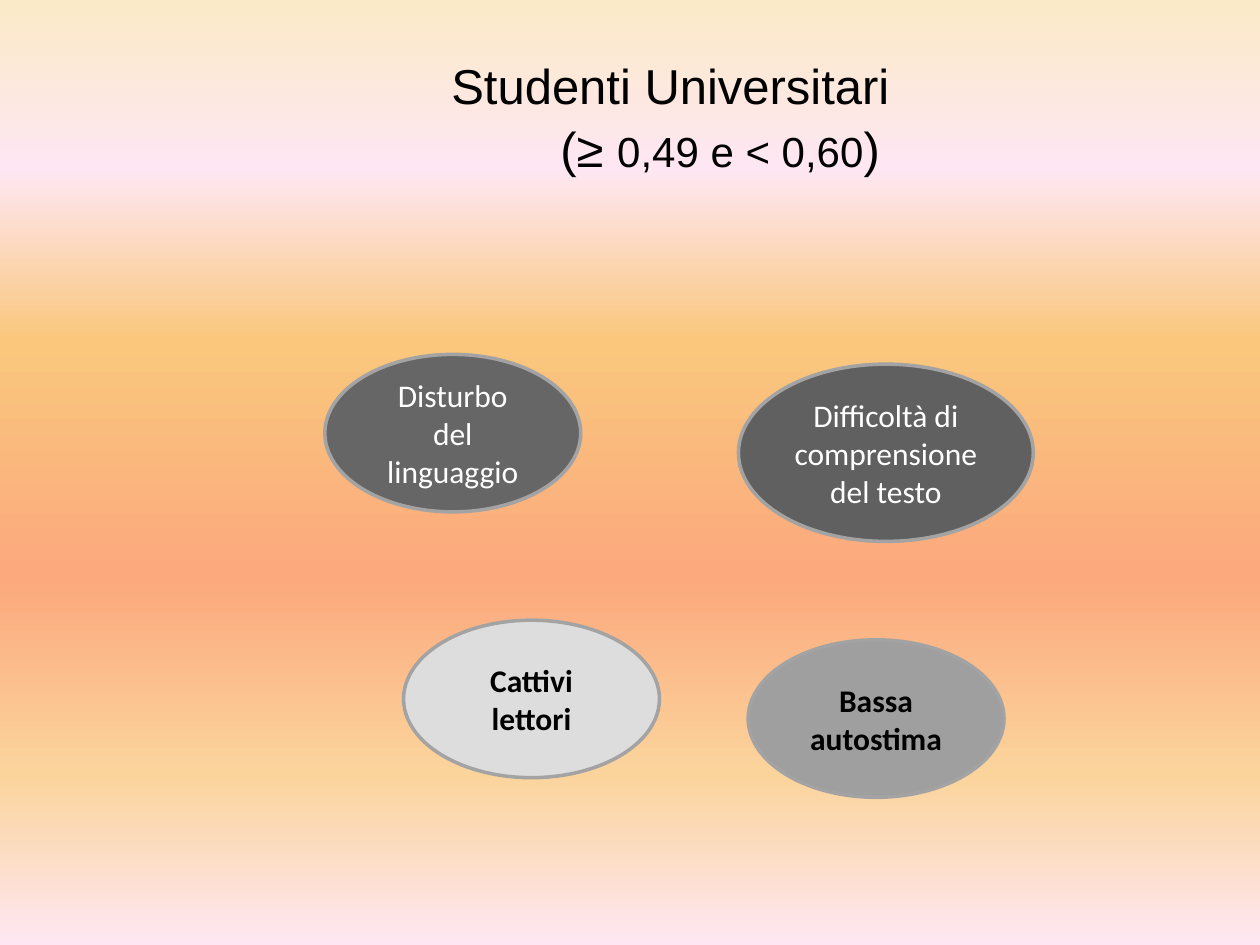
from copy import deepcopy

from pptx import Presentation
from pptx.dml.color import RGBColor as RGB
from pptx.enum.shapes import MSO_SHAPE as SHAPE
from pptx.enum.text import MSO_ANCHOR as ANCHOR, PP_ALIGN as ALIGN
from pptx.oxml.ns import qn
from pptx.util import Pt

BLACK = RGB(0x00, 0x00, 0x00)
WHITE = RGB(0xFF, 0xFF, 0xFF)
OUTLINE = RGB(0xA3, 0xA3, 0xA3)
CHARCOAL = RGB(0x66, 0x66, 0x66)
DARK_GREY = RGB(0x60, 0x60, 0x60)
LIGHT_GREY = RGB(0xDD, 0xDD, 0xDD)
MID_GREY = RGB(0x9F, 0x9F, 0x9F)
CREAM = RGB(0xFB, 0xEA, 0xC7)
PINK = RGB(0xFE, 0xE7, 0xF2)
AMBER = RGB(0xFA, 0xC7, 0x7D)
CORAL = RGB(0xFB, 0xA9, 0x7D)
SAND = RGB(0xFB, 0xD4, 0x9C)

SUNSET = [(0, CREAM), (18, PINK), (36, AMBER), (61, CORAL), (82, SAND), (100, PINK)]


class Deck:
    heading = {"name": "Arial", "size": Pt(28)}
    label = {"name": "Calibri", "size": Pt(18)}

    def __init__(self, width, height):
        self.prs = Presentation()
        self.prs.slide_width, self.prs.slide_height = Pt(width), Pt(height)
        self.s = self.prs.slides.add_slide(self.prs.slide_layouts[6])

    def background(self, stops):
        fill = self.s.background.fill
        fill.gradient()
        fill.gradient_angle = 270
        gs_list = self.s.element.find(".//" + qn("a:gsLst"))
        for _ in range(len(stops) - len(gs_list)):
            gs_list.append(deepcopy(gs_list[0]))
        for stop, (position, color) in zip(fill.gradient_stops, stops):
            stop.position = position / 100
            stop.color.rgb = color

    def run(self, p, text, color, **style):
        r = p.add_run()
        r.text = text
        for key, value in style.items():
            setattr(r.font, key, value)
        r.font.color.rgb = color

    def title(self, box, lines):
        tf = self.s.shapes.add_textbox(*map(Pt, box)).text_frame
        for key, value in {"word_wrap": True, "margin_top": Pt(6)}.items():
            setattr(tf, key, value)
        for i, (indent, runs) in enumerate(lines):
            p = tf.add_paragraph() if i else tf.paragraphs[0]
            p.alignment = ALIGN.CENTER
            p.space_before = Pt(2 if i else 0)
            p._p.get_or_add_pPr().set("marL", str(Pt(indent)))
            for text, size in runs:
                self.run(p, text, BLACK, **{**self.heading, "size": Pt(size)})

    def ellipse(self, box, text, fill, color, bold=False):
        sp = self.s.shapes.add_shape(SHAPE.OVAL, *map(Pt, box))
        sp.shadow.inherit = False
        sp.fill.solid()
        sp.fill.fore_color.rgb = fill
        sp.line.color.rgb = OUTLINE
        sp.line.width = Pt(2)
        tf = sp.text_frame
        for key, value in {"word_wrap": True, "vertical_anchor": ANCHOR.MIDDLE}.items():
            setattr(tf, key, value)
        p = tf.paragraphs[0]
        p.alignment = ALIGN.CENTER
        self.run(p, text, color, bold=bold, **self.label)


def main():
    deck = Deck(720, 540)
    deck.background(SUNSET)
    deck.title((82, 26, 574, 147), [
        (28, [("Studenti Universitari", 28)]),
        (85, [("(≥ ", 28), ("0,49 e < 0,60", 24), (")", 28)]),
    ])
    w, h = 146.25, 90
    deck.ellipse((185.6, 202.5, w, h), "Disturbo del linguaggio", CHARCOAL, WHITE)
    deck.ellipse((422, 208.1, 168.5, 101.3), "Difficoltà di comprensione del testo",
                 DARK_GREY, WHITE)
    deck.ellipse((230.6, 354.4, w, h), "Cattivi lettori", LIGHT_GREY, BLACK, bold=True)
    deck.ellipse((427.5, 365.6, w, h), "Bassa autostima", MID_GREY, BLACK, bold=True)
    deck.prs.save("out.pptx")


if __name__ == "__main__":
    main()
